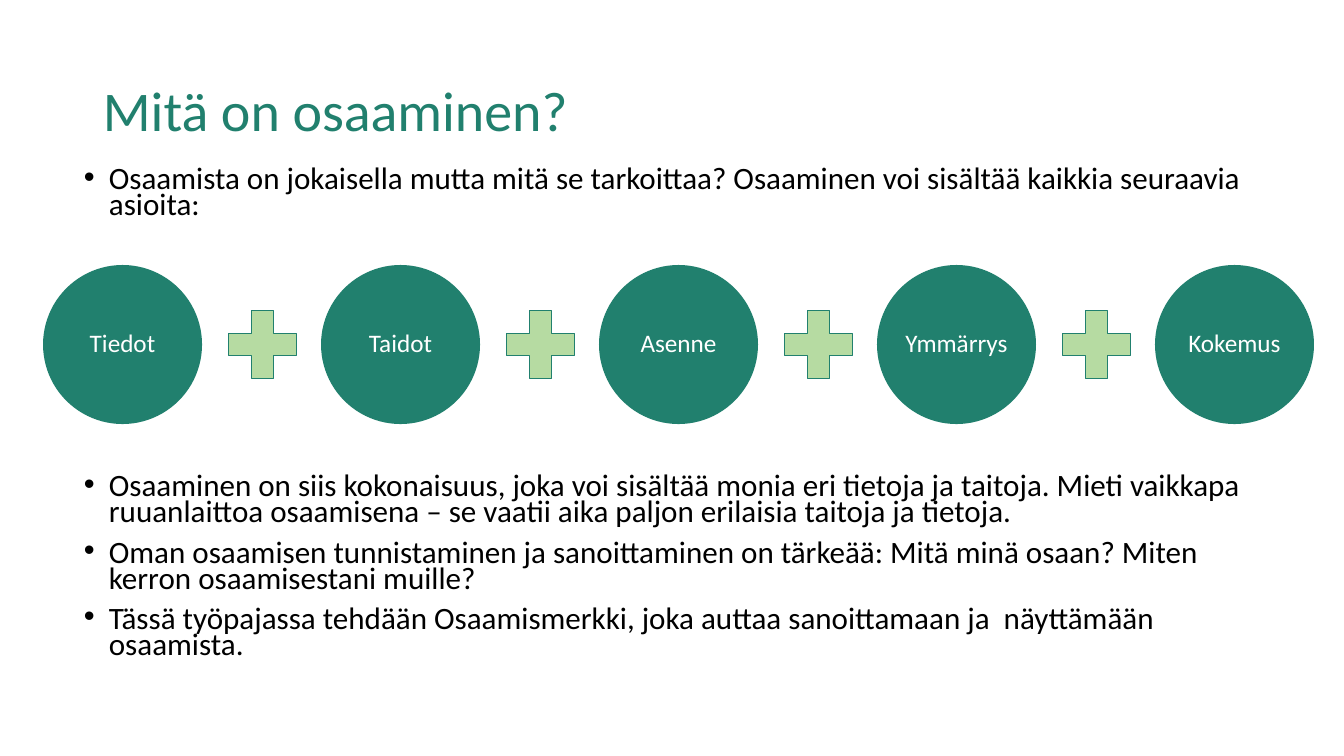
from dataclasses import dataclass

from lxml.etree import SubElement
from pptx import Presentation
from pptx.dml.color import RGBColor
from pptx.enum.shapes import MSO_SHAPE
from pptx.enum.text import MSO_ANCHOR, PP_ALIGN
from pptx.oxml.ns import qn
from pptx.util import Emu, Pt


@dataclass(frozen=True)
class Theme:
    font: str = "Calibri"
    green: str = "21806E"
    light: str = "B6DBA2"
    white: str = "FFFFFF"
    black: str = "000000"
    title: float = 40
    body: float = 22.2
    label: float = 18


THEME = Theme()
PX_PER_INCH = 100.8
CIRCLE, PLUS = 159, 93
ROW_LEFT, ROW_TOP, STEP, PLUS_OFFSET = 43, 265, 278, 173

INTRO = [
    "Osaamista on jokaisella mutta mitä se tarkoittaa? Osaaminen voi sisältää kaikkia seuraavia asioita:",
]
PARTS = ["Tiedot", "Taidot", "Asenne", "Ymmärrys", "Kokemus"]
SUMMARY = [
    "Osaaminen on siis kokonaisuus, joka voi sisältää monia eri tietoja ja taitoja. "
    "Mieti vaikkapa ruuanlaittoa osaamisena – se vaatii aika paljon erilaisia taitoja ja tietoja.",
    "Oman osaamisen tunnistaminen ja sanoittaminen on tärkeää: Mitä minä osaan? "
    "Miten kerron osaamisestani muille?",
    "Tässä työpajassa tehdään Osaamismerkki, joka auttaa sanoittamaan ja  näyttämään osaamista.",
]


def px(n):
    return Emu(round(n * 914400 / PX_PER_INCH))


def rgb(color):
    return RGBColor.from_string(color)


def add_bullet(p):
    pPr = p._p.get_or_add_pPr()
    pPr.set("marL", str(px(25)))
    pPr.set("indent", str(px(-25)))
    SubElement(pPr, qn("a:buFont"), typeface="Arial")
    SubElement(pPr, qn("a:buChar"), char="•")


def write(tf, lines, *, size, color, align=PP_ALIGN.LEFT, anchor=MSO_ANCHOR.TOP,
          spacing=0.9, before=0, bullet=False):
    tf.word_wrap = True
    tf.vertical_anchor = anchor
    for i, text in enumerate(lines):
        p = tf.add_paragraph() if i else tf.paragraphs[0]
        p.alignment = align
        p.line_spacing = spacing
        p.space_before = Pt(before if i else 0)
        if bullet:
            add_bullet(p)
        r = p.add_run()
        r.text = text
        r.font.name = THEME.font
        r.font.size = Pt(size)
        r.font.color.rgb = rgb(color)


def add_text(slide, x, y, w, h, lines, **fmt):
    box = slide.shapes.add_textbox(px(x), px(y), px(w), px(h))
    write(box.text_frame, lines, **fmt)


def add_bullets(slide, y, h, lines):
    add_text(slide, 74, y, 1202, h, lines, size=THEME.body, color=THEME.black,
             spacing=0.7, before=10, bullet=True)


def add_figure(slide, kind, x, y, size, fill):
    sp = slide.shapes.add_shape(kind, px(x), px(y), px(size), px(size))
    sp.shadow.inherit = False
    sp.fill.solid()
    sp.fill.fore_color.rgb = rgb(fill)
    return sp


def add_circle(slide, x, label):
    sp = add_figure(slide, MSO_SHAPE.OVAL, x, ROW_TOP, CIRCLE, THEME.green)
    sp.line.fill.background()
    tf = sp.text_frame
    tf.margin_left = tf.margin_right = tf.margin_top = tf.margin_bottom = px(2)
    write(tf, [label], size=THEME.label, color=THEME.white,
          align=PP_ALIGN.CENTER, anchor=MSO_ANCHOR.MIDDLE)


def add_plus(slide, x):
    y = ROW_TOP + (CIRCLE - PLUS) // 2
    sp = add_figure(slide, MSO_SHAPE.MATH_PLUS, x, y, PLUS, THEME.light)
    sp.line.color.rgb = rgb(THEME.green)
    sp.line.width = Pt(0.75)


def main():
    prs = Presentation()
    prs.slide_width, prs.slide_height = px(1344), px(756)
    slide = prs.slides.add_slide(prs.slide_layouts[6])
    add_text(slide, 93, 40, 1159, 146, ["Mitä on osaaminen?"], size=THEME.title,
             color=THEME.green, anchor=MSO_ANCHOR.MIDDLE)
    add_bullets(slide, 164, 66, INTRO)
    for i, label in enumerate(PARTS):
        x = ROW_LEFT + i * STEP
        if i:
            add_plus(slide, x - STEP + PLUS_OFFSET)
        add_circle(slide, x, label)
    add_bullets(slide, 471, 233, SUMMARY)
    prs.save("out.pptx")


if __name__ == "__main__":
    main()
